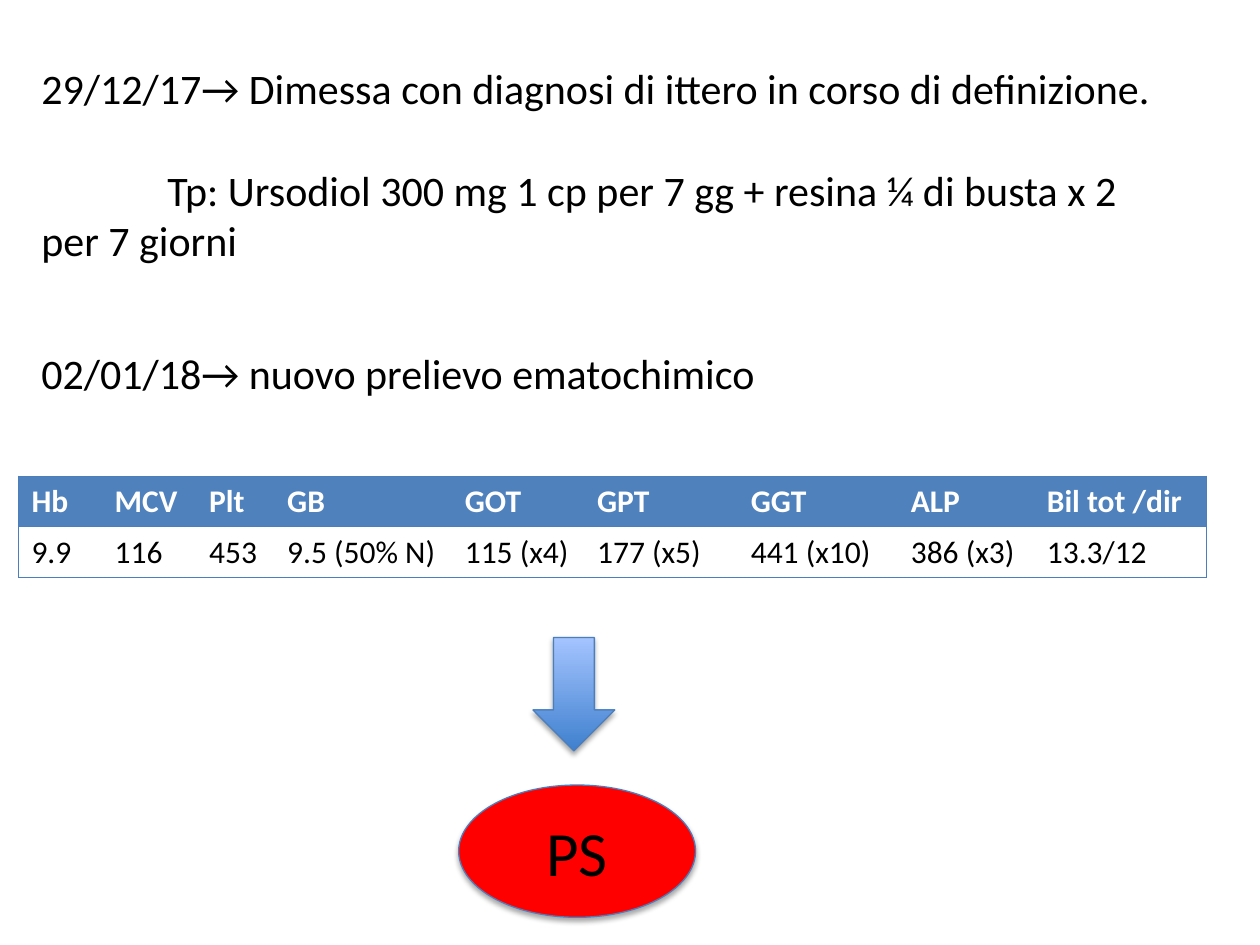
"""Build the slide on the blood test and the referral to PS."""
from typing import NamedTuple

import lxml.etree
import pptx
import pptx.dml.color
import pptx.enum.shapes
import pptx.enum.text
import pptx.oxml
import pptx.oxml.ns
import pptx.util

WIDTH = pptx.util.Inches(10)
HEIGHT = pptx.util.Inches(7.5)
FONT, BLACK, WHITE, RED = "Calibri", "000000", "FFFFFF", "FF0000"
HEAD, EDGE, DARK, LIGHT = "4F81BD", "4B7EBC", "3F80CE", "A4C4FF"
PLAIN_STYLE = "{2D5ABB26-0587-4C30-8999-92F81FD0307C}"
ROW = 5.33


class Box(NamedTuple):
    """A place in hundredths of the slide's width and height."""
    left: float
    top: float
    width: float
    height: float


class Line(NamedTuple):
    """A paragraph, its rows, its indent in inches and space before in points."""
    rows: tuple[str, ...]
    indent: float = 0
    before: float = 0


class Note(NamedTuple):
    """A text box with its paragraphs."""
    box: Box
    lines: tuple[Line, ...]


class Test(NamedTuple):
    """A table column: width, heading and result."""
    width: float
    name: str
    value: str


NOTES = (
    Note(Box(2.3, 6, 93.5, 22.93), (
        Line(("29/12/17→ Dimessa con diagnosi di ittero in corso di definizione.",)),
        Line(("Tp: Ursodiol 300 mg 1 cp per 7 gg + resina ¼ di busta x 2",
              "per 7 giorni"), 1, 29),
    )),
    Note(Box(2.3, 36.13, 63.7, 6.67), (
        Line(("02/01/18→ nuovo prelievo ematochimico",)),
    )),
)
TESTS = (
    Test(6.6, "Hb", "9.9"),
    Test(7.5, "MCV", "116"),
    Test(6.2, "Plt", "453"),
    Test(14.1, "GB", "9.5 (50% N)"),
    Test(10.5, "GOT", "115 (x4)"),
    Test(12.2, "GPT", "177 (x5)"),
    Test(12.7, "GGT", "441 (x10)"),
    Test(10.8, "ALP", "386 (x3)"),
    Test(13.7, "Bil tot /dir", "13.3/12"),
)
PANEL = Box(1.5, 50.4, sum(test.width for test in TESTS), 2 * ROW)
ARROW = Box(42.3, 67.47, 6.5, 12)
OVAL = Box(36.4, 83.07, 18.8, 14)


def hue(code: str) -> pptx.dml.color.RGBColor:
    """Turn a hex string into a colour."""
    return pptx.dml.color.RGBColor.from_string(code)


def place(box: Box) -> tuple[int, int, int, int]:
    """Turn shares of the slide into lengths."""
    return (int(WIDTH * box.left / 100), int(HEIGHT * box.top / 100),
            int(WIDTH * box.width / 100), int(HEIGHT * box.height / 100))


def add_run(para, text: str, size: float, code: str = BLACK, bold: bool = False) -> None:
    """Add one run of text to a paragraph."""
    run = para.add_run()
    run.text = text
    run.font.name, run.font.size, run.font.bold = FONT, pptx.util.Pt(size), bold
    run.font.color.rgb = hue(code)


def add_note(slide, note: Note) -> None:
    """Draw a text box with its paragraphs."""
    frame = slide.shapes.add_textbox(*place(note.box)).text_frame
    frame.word_wrap = True
    for index, line in enumerate(note.lines):
        para = frame.add_paragraph() if index else frame.paragraphs[0]
        if line.indent:
            props = para._p.get_or_add_pPr()
            props.set("marL", "0")
            props.set("indent", str(pptx.util.Inches(line.indent)))
        if line.before:
            para.space_before = pptx.util.Pt(line.before)
        for count, row in enumerate(line.rows):
            if count:
                para.add_line_break()
            add_run(para, row, 24)


def add_edge(cell, side: str) -> None:
    """Draw one border of a cell."""
    line = lxml.etree.SubElement(
        cell._tc.get_or_add_tcPr(), pptx.oxml.ns.qn(f"a:ln{side}"),
        w=str(pptx.util.Pt(0.75)))
    fill = lxml.etree.SubElement(line, pptx.oxml.ns.qn("a:solidFill"))
    lxml.etree.SubElement(fill, pptx.oxml.ns.qn("a:srgbClr"), val=EDGE)


def add_panel(slide) -> None:
    """Draw the table of blood tests."""
    frame = slide.shapes.add_table(2, len(TESTS), *place(PANEL))
    frame._element.xpath(".//a:tableStyleId")[0].text = PLAIN_STYLE
    table = frame.table
    table.horz_banding = False
    for col, test in enumerate(TESTS):
        table.columns[col].width = int(WIDTH * test.width / 100)
        for row, text in enumerate((test.name, test.value)):
            cell = table.cell(row, col)
            ends = {"L": col == 0, "R": col == len(TESTS) - 1,
                    "T": True, "B": row == 1}
            for side, drawn in ends.items():
                if drawn:
                    add_edge(cell, side)
            if row:
                cell.fill.background()
            else:
                cell.fill.solid()
                cell.fill.fore_color.rgb = hue(HEAD)
            add_run(cell.text_frame.paragraphs[0], text, 18,
                    BLACK if row else WHITE, row == 0)


def add_form(slide, kind, box: Box):
    """Draw a preset shape with a thin edge and a soft shadow."""
    shape = slide.shapes.add_shape(kind, *place(box))
    shape.line.color.rgb = hue(EDGE)
    shape.line.width = pptx.util.Pt(0.75)
    shape.shadow.inherit = False
    effects = shape._element.spPr.find(pptx.oxml.ns.qn("a:effectLst"))
    effects.append(pptx.oxml.parse_xml(
        f'<a:outerShdw {pptx.oxml.ns.nsdecls("a")} blurRad="{pptx.util.Pt(3.1)}" '
        f'dist="{pptx.util.Pt(1.8)}" dir="5400000" rotWithShape="0">'
        f'<a:srgbClr val="{BLACK}"><a:alpha val="35000"/></a:srgbClr></a:outerShdw>'))
    return shape


def main() -> None:
    """Build and save the slide."""
    deck = pptx.Presentation()
    deck.slide_width, deck.slide_height = WIDTH, HEIGHT
    slide = deck.slides.add_slide(deck.slide_layouts[6])
    for note in NOTES:
        add_note(slide, note)
    add_panel(slide)
    kinds = pptx.enum.shapes.MSO_SHAPE
    arrow = add_form(slide, kinds.DOWN_ARROW, ARROW)
    arrow.fill.gradient()
    arrow.fill.gradient_angle = 90
    for stop, code, spot in zip(arrow.fill.gradient_stops, (DARK, LIGHT), (0, 1)):
        stop.color.rgb, stop.position = hue(code), spot
    oval = add_form(slide, kinds.OVAL, OVAL)
    oval.fill.solid()
    oval.fill.fore_color.rgb = hue(RED)
    oval.text_frame.vertical_anchor = pptx.enum.text.MSO_ANCHOR.MIDDLE
    para = oval.text_frame.paragraphs[0]
    para.alignment = pptx.enum.text.PP_ALIGN.CENTER
    add_run(para, "PS", 36)
    deck.save("out.pptx")


if __name__ == "__main__":
    main()
